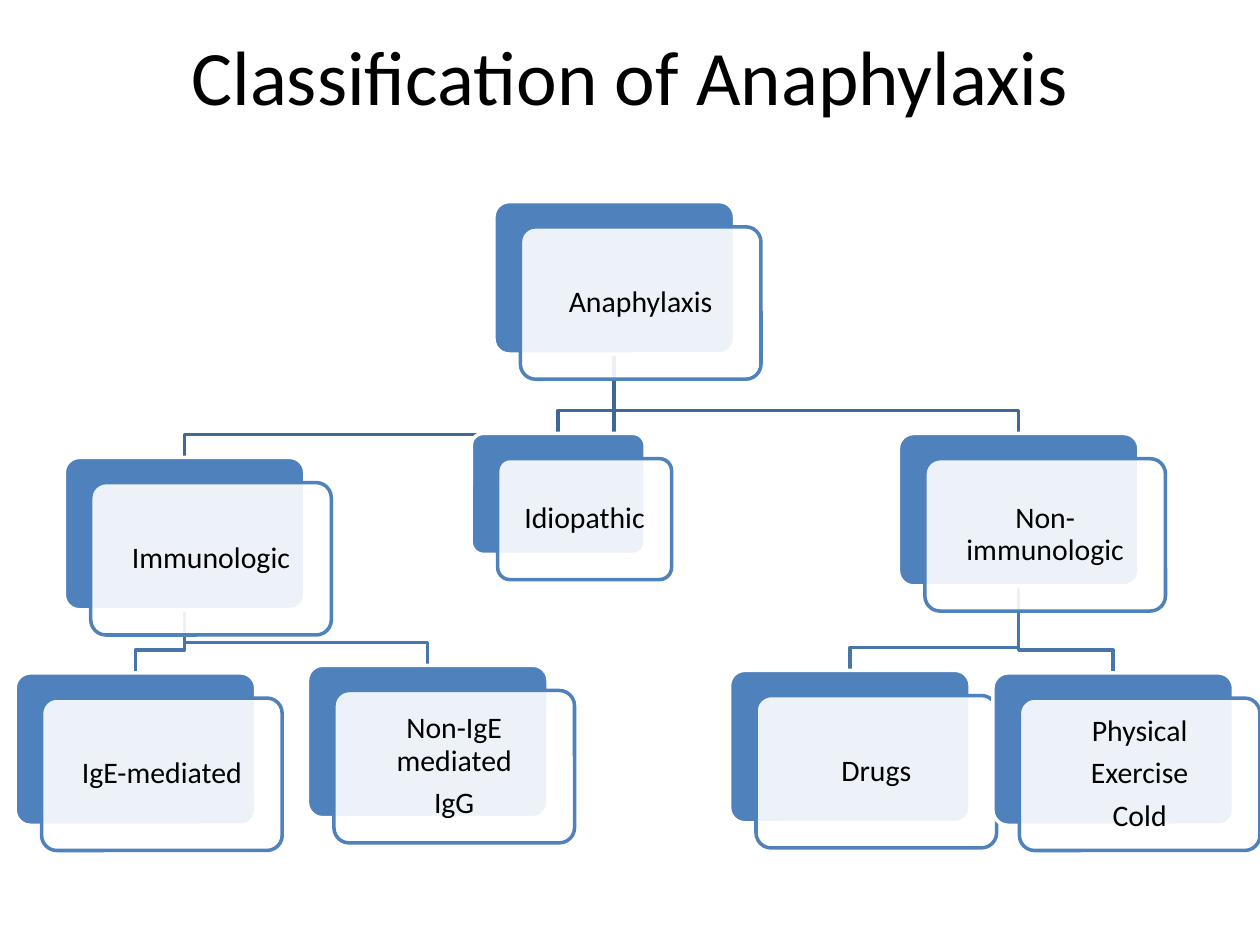
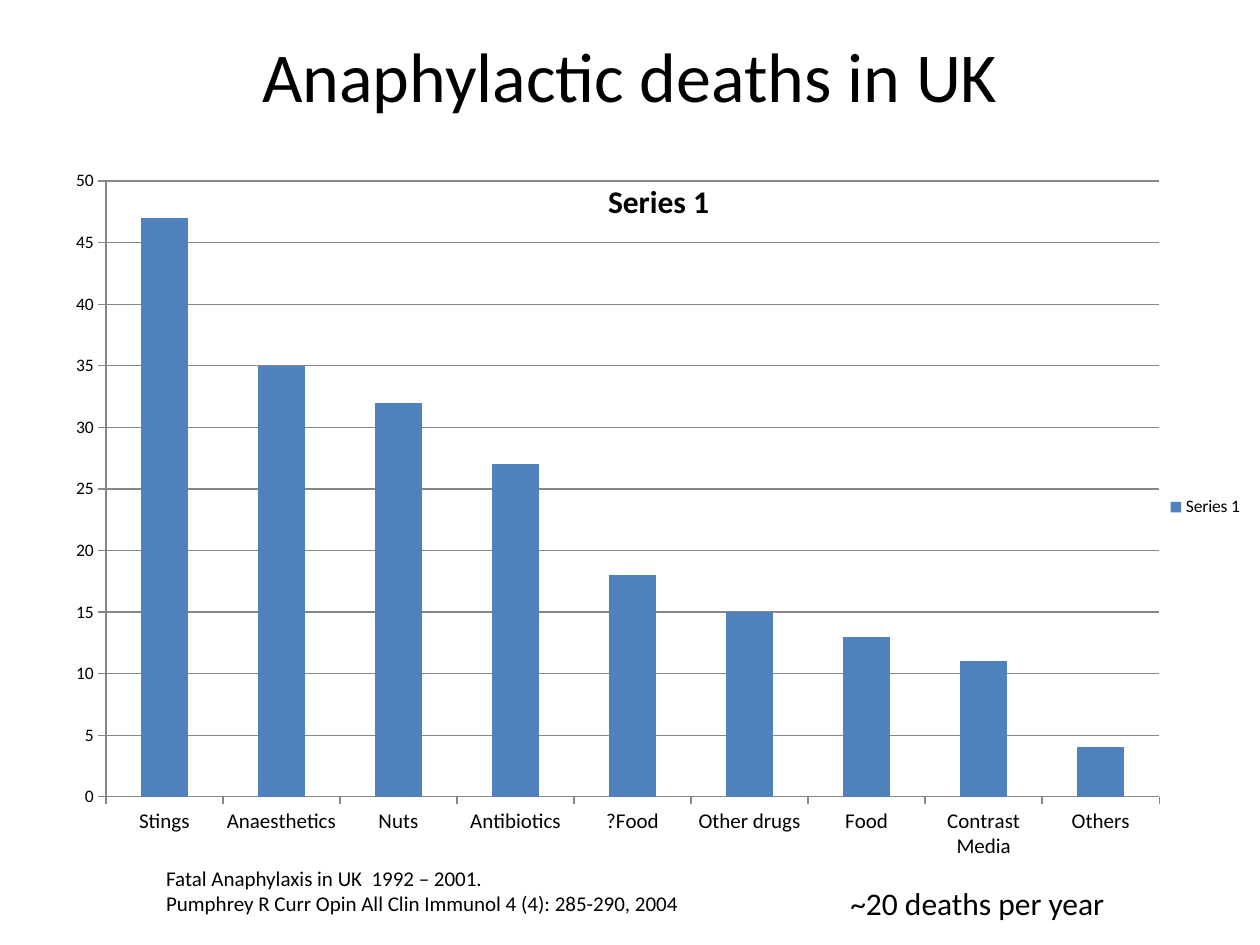
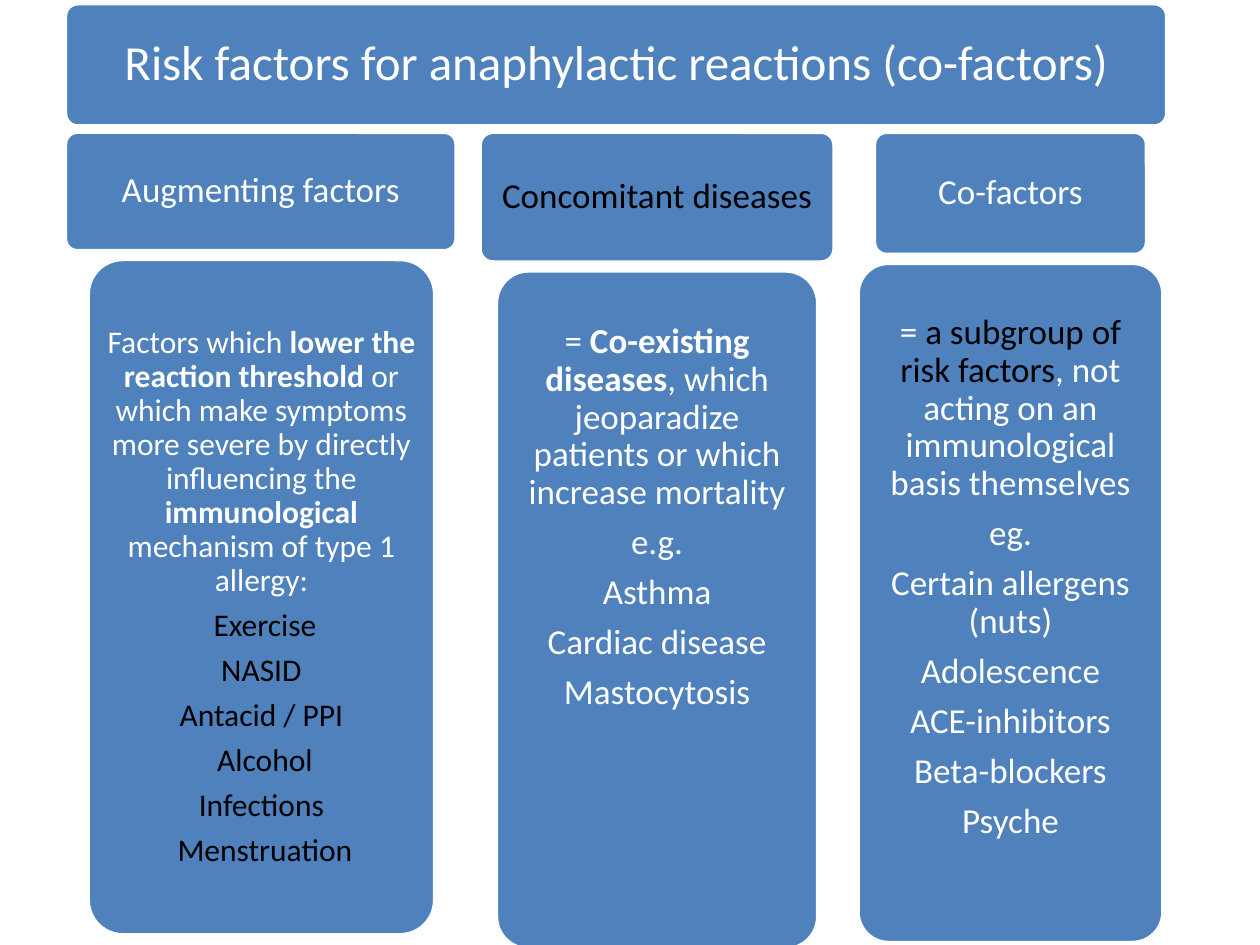
import pptx
import pptx.chart.data
import pptx.dml.color
import pptx.enum.chart
import pptx.enum.shapes
import pptx.enum.text
import pptx.oxml
import pptx.oxml.ns
import pptx.util

Inches = pptx.util.Inches
Pt = pptx.util.Pt
MIDDLE = pptx.enum.text.MSO_ANCHOR.MIDDLE
CENTER = pptx.enum.text.PP_ALIGN.CENTER
FONT = "Calibri"
BLUE, WHITE, BLACK, GREY = "4F81BD", "FFFFFF", "000000", "878787"


def rgb(value):
    return pptx.dml.color.RGBColor.from_string(value)


def add_box(s, at, fill, line, paras=(), size=18, inset=0.07, bottom=None):
    sp = s.shapes.add_shape(pptx.enum.shapes.MSO_SHAPE.ROUNDED_RECTANGLE,
                            *[Inches(v) for v in at])
    sp.adjustments[0] = 0.1
    sp.shadow.inherit = False
    sp.fill.solid()
    sp.fill.fore_color.rgb = rgb(fill)
    sp.line.color.rgb = rgb(line)
    sp.line.width = Pt(2)
    tf = sp.text_frame
    frame = {"word_wrap": True, "vertical_anchor": MIDDLE,
             "margin_left": Inches(inset), "margin_right": Inches(inset),
             "margin_top": Inches(inset), "margin_bottom": Inches(bottom or inset)}
    for name, value in frame.items():
        setattr(tf, name, value)
    for i, runs in enumerate(paras):
        p = tf.paragraphs[0] if i == 0 else tf.add_paragraph()
        spacing = {"alignment": CENTER, "line_spacing": 0.9, "space_after": Pt(0.35 * size)}
        for name, value in spacing.items():
            setattr(p, name, value)
        for text, color, bold in runs:
            r = p.add_run()
            r.text = text
            for name, value in {"name": FONT, "size": Pt(size), "bold": bold}.items():
                setattr(r.font, name, value)
            r.font.color.rgb = rgb(color)
    return sp


prs = pptx.Presentation()
prs.slide_width = Inches(10)
prs.slide_height = Inches(7.5)

titled = []
for text, size in [("Classification of Anaphylaxis", 44), ("Anaphylactic deaths in UK", 40)]:
    s = prs.slides.add_slide(prs.slide_layouts[5])
    title = s.shapes.title
    place = {"left": 0.5, "top": -0.03, "width": 9, "height": 1.25}
    for name, value in place.items():
        setattr(title, name, Inches(value))
    title.text_frame.text = text
    title.text_frame.vertical_anchor = MIDDLE
    p = title.text_frame.paragraphs[0]
    p.alignment = CENTER
    for name, value in {"name": FONT, "size": Pt(size)}.items():
        setattr(p.font, name, value)
    p.font.color.rgb = rgb(BLACK)
    titled.append(s)
s_tree, s_deaths = titled

card = (1.91, 1.21)
nodes = {
    "Anaphylaxis": (3.92, 1.6, *card, ["Anaphylaxis"]),
    "Immunologic": (0.51, 3.63, *card, ["Immunologic"]),
    "IgE": (0.12, 5.34, *card, ["IgE-mediated"]),
    "Non-IgE": (2.44, 5.28, *card, ["Non-IgE mediated", "IgG"]),
    "Non-immunologic": (7.13, 3.44, *card, ["Non-immunologic"]),
    "Drugs": (5.79, 5.32, *card, ["Drugs"]),
    "Physical": (7.88, 5.34, *card, ["Physical", "Exercise", "Cold"]),
    "Idiopathic": (3.74, 3.44, 1.38, 0.96, ["Idiopathic"]),
}
links = [
    ("Anaphylaxis", "Idiopathic"), ("Non-immunologic", "Physical"),
    ("Non-immunologic", "Drugs"), ("Anaphylaxis", "Non-immunologic"),
    ("Immunologic", "Non-IgE"), ("Immunologic", "IgE"), ("Anaphylaxis", "Immunologic"),
]
for parent, child in links:
    left, top, width, height, _ = nodes[parent]
    start_x, start_y = left + width / 2, top + height
    left, end_y, width, height, _ = nodes[child]
    end_x = left + width / 2
    bend_y = end_y - 0.18
    fb = s_tree.shapes.build_freeform(Inches(start_x), Inches(start_y))
    corners = [(start_x, bend_y), (end_x, bend_y), (end_x, end_y)]
    fb.add_line_segments([(Inches(x), Inches(y)) for x, y in corners], close=False)
    sp = fb.convert_to_shape()
    sp.shadow.inherit = False
    sp.fill.background()
    sp.line.color.rgb = rgb("3F6797" if parent == "Anaphylaxis" else "4875AC")
    sp.line.width = Pt(2)

for left, top, width, height, lines in nodes.values():
    add_box(s_tree, (left, top, width, height), BLUE, WHITE)
    sp = add_box(s_tree, (left + 0.21, top + 0.2, width, height), WHITE, BLUE,
                 [[(line, BLACK, False)] for line in lines], 17)
    clr = sp.fill._xPr.find(".//" + pptx.oxml.ns.qn("a:srgbClr"))
    clr.append(pptx.oxml.parse_xml('<a:alpha %s val="90000"/>' % pptx.oxml.ns.nsdecls("a")))

data = pptx.chart.data.CategoryChartData()
data.categories = ["Stings", "Anaesthetics", "Nuts", "Antibiotics", "?Food",
                   "Other drugs", "Food", "Contrast Media", "Others"]
data.add_series("Series 1", (47, 35, 32, 27, 18, 15, 13, 11, 4))
chart = s_deaths.shapes.add_chart(
    pptx.enum.chart.XL_CHART_TYPE.COLUMN_CLUSTERED,
    Inches(0.36), Inches(1.15), Inches(9.61), Inches(5.75), data).chart
for name, value in {"name": FONT, "size": Pt(10)}.items():
    setattr(chart.font, name, value)
chart.font.color.rgb = rgb(BLACK)

chart.has_title = True
chart.chart_title.text_frame.text = "Series 1"
f = chart.chart_title.text_frame.paragraphs[0].runs[0].font
for name, value in {"name": FONT, "size": Pt(18), "bold": True}.items():
    setattr(f, name, value)
f.color.rgb = rgb(BLACK)

chart.has_legend = True
chart.legend.position = pptx.enum.chart.XL_LEGEND_POSITION.RIGHT
chart.legend.include_in_layout = False

plot = chart.plots[0]
plot.gap_width = 150
plot.vary_by_categories = False
fill = plot.series[0].format.fill
fill.solid()
fill.fore_color.rgb = rgb(BLUE)

for axis in (chart.category_axis, chart.value_axis):
    axis.major_tick_mark = pptx.enum.chart.XL_TICK_MARK.OUTSIDE
    axis.format.line.color.rgb = rgb(GREY)
chart.category_axis.tick_labels.font.size = Pt(12)
scale = {"minimum_scale": 0, "maximum_scale": 50, "major_unit": 5, "has_major_gridlines": True}
for name, value in scale.items():
    setattr(chart.value_axis, name, value)
chart.value_axis.major_gridlines.format.line.color.rgb = rgb(GREY)

layouts = [
    ("c:plotArea", 0, '<c:layoutTarget val="inner"/>', {"x": 0.05, "y": 0.05, "w": 0.87, "h": 0.85}),
    ("c:title", 1, "", {"x": 0.46, "y": 0.04}),
]
for tag, index, target, values in layouts:
    el = chart._chartSpace.chart.find(pptx.oxml.ns.qn(tag))
    for old in el.findall(pptx.oxml.ns.qn("c:layout")):
        el.remove(old)
    modes = '<c:xMode val="edge"/><c:yMode val="edge"/>'
    sizes = "".join('<c:%s val="%s"/>' % item for item in values.items())
    el.insert(index, pptx.oxml.parse_xml(
        "<c:layout %s><c:manualLayout>%s</c:manualLayout></c:layout>"
        % (pptx.oxml.ns.nsdecls("c"), target + modes + sizes)))

notes = [
    ((1.22, 6.82, 6.61, 0.5), 12,
     ["Fatal Anaphylaxis in UK  1992 – 2001.",
      "Pumphrey R Curr Opin All Clin Immunol 4 (4): 285-290, 2004"]),
    ((6.65, 6.97, 2.28, 0.4), 18, ["~20 deaths per year"]),
]
for at, size, lines in notes:
    tf = s_deaths.shapes.add_textbox(*[Inches(v) for v in at]).text_frame
    tf.word_wrap = True
    tf.text = "\n".join(lines)
    for p in tf.paragraphs:
        for name, value in {"name": FONT, "size": Pt(size)}.items():
            setattr(p.font, name, value)
        p.font.color.rgb = rgb(BLACK)

s = prs.slides.add_slide(prs.slide_layouts[6])
add_box(s, (0.52, 0.03, 8.74, 0.97), BLUE, WHITE,
        [[("Risk factors for anaphylactic reactions (co-factors)", WHITE, False)]], 28, 0.12)

columns = [
    ("Augmenting factors", WHITE, (0.52, 1.05, 3.1, 0.94), (0.7, 2.06, 2.75, 5.36), 18, 0.07, 0.07,
     [("Factors which ", WHITE, False), ("lower the reaction threshold ", WHITE, True),
      ("or which make symptoms more severe by directly influencing the ", WHITE, False),
      ("immunological ", WHITE, True), ("mechanism of type 1 allergy:", WHITE, False)],
     BLACK, [" Exercise", "NASID", "Antacid / PPI", " Alcohol", "Infections", " Menstruation"]),
    ("Concomitant diseases", BLACK, (3.81, 1.05, 2.81, 1.03), (3.94, 2.15, 2.55, 5.38), 20, 0.08, 1.54,
     [("=", WHITE, False), (" Co-existing diseases", WHITE, True),
      (", which jeoparadize patients or which increase mortality", WHITE, False)],
     WHITE, ["e.g.", "Asthma", "Cardiac disease", "Mastocytosis"]),
    ("Co-factors", WHITE, (6.94, 1.05, 2.16, 0.97), (6.81, 2.09, 2.42, 5.39), 20, 0.08, 0.48,
     [("= ", WHITE, False), ("a subgroup of risk factors", BLACK, False),
      (", not acting on an immunological basis themselves", WHITE, False)],
     WHITE, ["eg.", "Certain allergens (nuts)", "Adolescence", "ACE-inhibitors",
             "Beta-blockers", "Psyche"]),
]
for head, head_color, head_at, body_at, size, inset, bottom, intro, item_color, items in columns:
    add_box(s, head_at, BLUE, WHITE, [[(head, head_color, False)]], 20, 0.08)
    paras = [intro] + [[(item, item_color, False)] for item in items]
    add_box(s, body_at, BLUE, WHITE, paras, size, inset, bottom)

prs.save("out.pptx")
